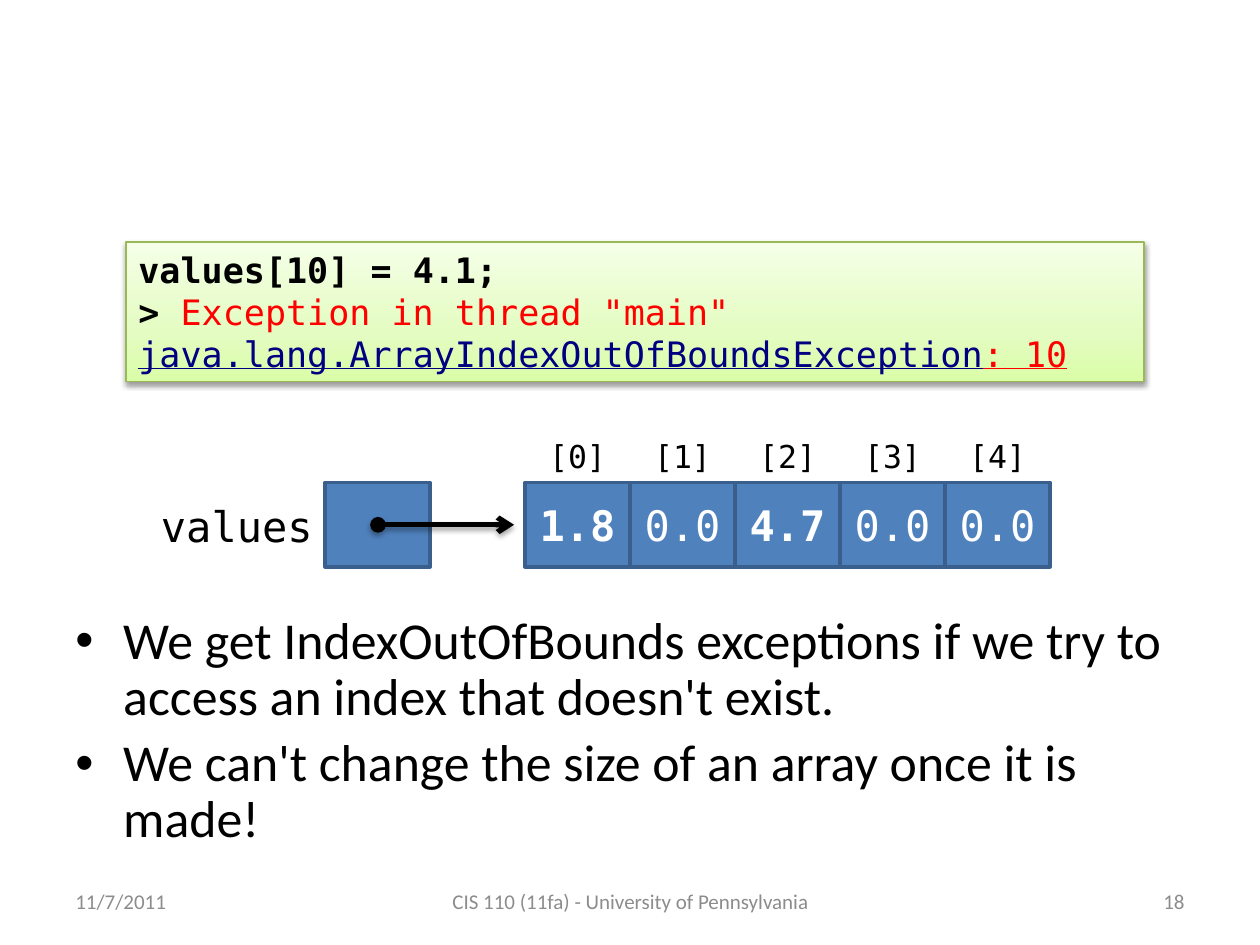
from copy import deepcopy
from typing import NamedTuple

from lxml.etree import SubElement
from pptx import Presentation
from pptx.dml.color import RGBColor
from pptx.enum.shapes import MSO_CONNECTOR as Connector, MSO_SHAPE as Preset
from pptx.enum.text import MSO_ANCHOR as Anchor, MSO_AUTO_SIZE as AutoSize, PP_ALIGN as Align
from pptx.oxml.ns import qn
from pptx.util import Inches, Pt

SANS, MONO = "Calibri", "DejaVu Sans Mono"
CELL_WIDTH, CELL_HEIGHT = 5 / 6, 0.67
ARRAY_LEFT, ARRAY_TOP = 25 / 6, 3.83


class Box(NamedTuple):
    left: float
    top: float
    width: float
    height: float


class Style(NamedTuple):
    size: float
    font: str = MONO
    color: str = "000000"
    bold: bool = False
    italic: bool = False
    underline: bool = False


class Cell(NamedTuple):
    value: str
    assigned: bool = False


class Footer(NamedTuple):
    text: str
    left: float
    width: float
    align: Align


CELLS = [Cell("1.8", True), Cell("0.0"), Cell("4.7", True), Cell("0.0"), Cell("0.0")]
FOOTERS = [
    Footer("11/7/2011", 0.5, 2.33, Align.LEFT),
    Footer("CIS 110 (11fa) - University of Pennsylvania", 3.42, 3.17, Align.CENTER),
    Footer("18", 7.17, 2.33, Align.RIGHT),
]
CODE = Style(20)
CODE_LINES = [
    [("values[10] = 4.1;", CODE._replace(bold=True))],
    [
        ("> ", CODE._replace(bold=True, italic=True)),
        ('Exception in thread "main" ', CODE._replace(color="FF0000")),
        ("java.lang.ArrayIndexOutOfBoundsException", CODE._replace(color="000080", underline=True)),
        (": 10", CODE._replace(color="FF0000", underline=True)),
    ],
]
CODE_GRADIENT = [(0, "DAFDA7"), (0.35, "E4FCC2"), (1, "F5FFE7")]
BULLETS = [
    "We get IndexOutOfBounds exceptions if we try to access an index that doesn't exist.",
    "We can't change the size of an array once it is made!",
]


def rgb(value: str) -> RGBColor:
    return RGBColor.from_string(value)


def emu(box: Box) -> list:
    return [Inches(length) for length in box]


def format_run(run, style: Style) -> None:
    font = run.font
    font.name, font.size = style.font, Pt(style.size)
    font.bold, font.italic, font.underline = style.bold, style.italic, style.underline
    font.color.rgb = rgb(style.color)


def set_text(shape, text: str, style: Style, align=Align.LEFT, anchor=Anchor.TOP) -> None:
    frame = shape.text_frame
    frame.text = text
    frame.word_wrap = True
    frame.vertical_anchor = anchor
    for paragraph in frame.paragraphs:
        paragraph.alignment = align
        format_run(paragraph.runs[0], style)


def add_text(slide, box: Box, text: str, style: Style, align=Align.LEFT, anchor=Anchor.TOP):
    shape = slide.shapes.add_textbox(*emu(box))
    set_text(shape, text, style, align, anchor)
    return shape


def add_rectangle(slide, box: Box, line_color: str, line_width: float):
    shape = slide.shapes.add_shape(Preset.RECTANGLE, *emu(box))
    shape.line.color.rgb = rgb(line_color)
    shape.line.width = Pt(line_width)
    shape.shadow.inherit = False
    return shape


def add_memory_box(slide, left: float):
    shape = add_rectangle(slide, Box(left, ARRAY_TOP, CELL_WIDTH, CELL_HEIGHT), "3A5F8C", 2)
    shape.fill.solid()
    shape.fill.fore_color.rgb = rgb("4F81BD")
    return shape


def add_drop_shadow(effects, opacity: int, distance: float) -> None:
    """Put a soft black shadow, falling straight down, into an effect list."""
    shadow = SubElement(
        effects, qn("a:outerShdw"), blurRad=str(Pt(3.1)), dist=str(Pt(distance)),
        dir="5400000", rotWithShape="0",
    )
    color = SubElement(shadow, qn("a:srgbClr"), val="000000")
    SubElement(color, qn("a:alpha"), val=str(opacity * 1000))


def add_code(slide) -> None:
    shape = add_rectangle(slide, Box(1, 1.92, 8.08, 1.11), "98B955", 0.75)
    shape.fill.gradient()
    shape.fill.gradient_angle = 90
    properties = shape._element.spPr
    stops = properties.find(".//" + qn("a:gsLst"))
    stops.append(deepcopy(stops[-1]))
    for stop, (position, color) in zip(shape.fill.gradient_stops, CODE_GRADIENT):
        stop.position = position
        stop.color.rgb = rgb(color)
    add_drop_shadow(properties.find(qn("a:effectLst")), 38, 1.6)

    frame = shape.text_frame
    frame.word_wrap = True
    frame.auto_size = AutoSize.SHAPE_TO_FIT_TEXT
    frame.vertical_anchor = Anchor.TOP
    for index, line in enumerate(CODE_LINES):
        paragraph = frame.add_paragraph() if index else frame.paragraphs[0]
        paragraph.alignment = Align.LEFT
        for text, style in line:
            run = paragraph.add_run()
            run.text = text
            format_run(run, style)


def add_array(slide) -> None:
    for index, cell in enumerate(CELLS):
        left = ARRAY_LEFT + index * CELL_WIDTH
        shape = add_memory_box(slide, left)
        style = Style(24, color="FFFFFF", bold=cell.assigned)
        set_text(shape, cell.value, style, Align.CENTER, Anchor.MIDDLE)
        add_text(slide, Box(left, 3.42, CELL_WIDTH, 0.42), f"[{index}]", Style(18), Align.CENTER)


def add_reference(slide) -> None:
    """Draw the variable and the arrow from it to the array."""
    add_text(slide, Box(1.08, 3.92, 1.5, 0.5), "values", Style(24), Align.RIGHT)
    add_memory_box(slide, 2.58)
    middle = Inches(ARRAY_TOP + CELL_HEIGHT / 2)
    arrow = slide.shapes.add_connector(Connector.STRAIGHT, Inches(3), middle, Inches(4.08), middle)
    arrow.line.color.rgb = rgb("000000")
    arrow.line.width = Pt(3)
    line = arrow.line._get_or_add_ln()
    SubElement(line, qn("a:headEnd"), type="oval")
    SubElement(line, qn("a:tailEnd"), type="arrow")
    add_drop_shadow(SubElement(arrow._element.spPr, qn("a:effectLst")), 35, 1.8)


def add_bullets(slide) -> None:
    shape = add_text(slide, Box(0.5, 4.83, 9, 2.08), "\n".join(BULLETS), Style(29.6, SANS))
    for paragraph in shape.text_frame.paragraphs:
        paragraph.line_spacing = 0.9
        paragraph.space_before = Pt(6)
        properties = paragraph._p.get_or_add_pPr()
        properties.set("marL", str(Inches(0.38)))
        properties.set("indent", str(Inches(-0.38)))
        SubElement(properties, qn("a:buFont"), typeface="Arial")
        SubElement(properties, qn("a:buChar"), char="•")


def main() -> None:
    presentation = Presentation()
    presentation.slide_width, presentation.slide_height = Inches(10), Inches(7.5)
    slide = presentation.slides.add_slide(presentation.slide_layouts[6])
    for footer in FOOTERS:
        box = Box(footer.left, 6.95, footer.width, 0.4)
        add_text(slide, box, footer.text, Style(12, SANS, "8C8C8C"), footer.align, Anchor.MIDDLE)
    add_code(slide)
    add_array(slide)
    add_reference(slide)
    add_bullets(slide)
    presentation.save("out.pptx")


if __name__ == "__main__":
    main()
